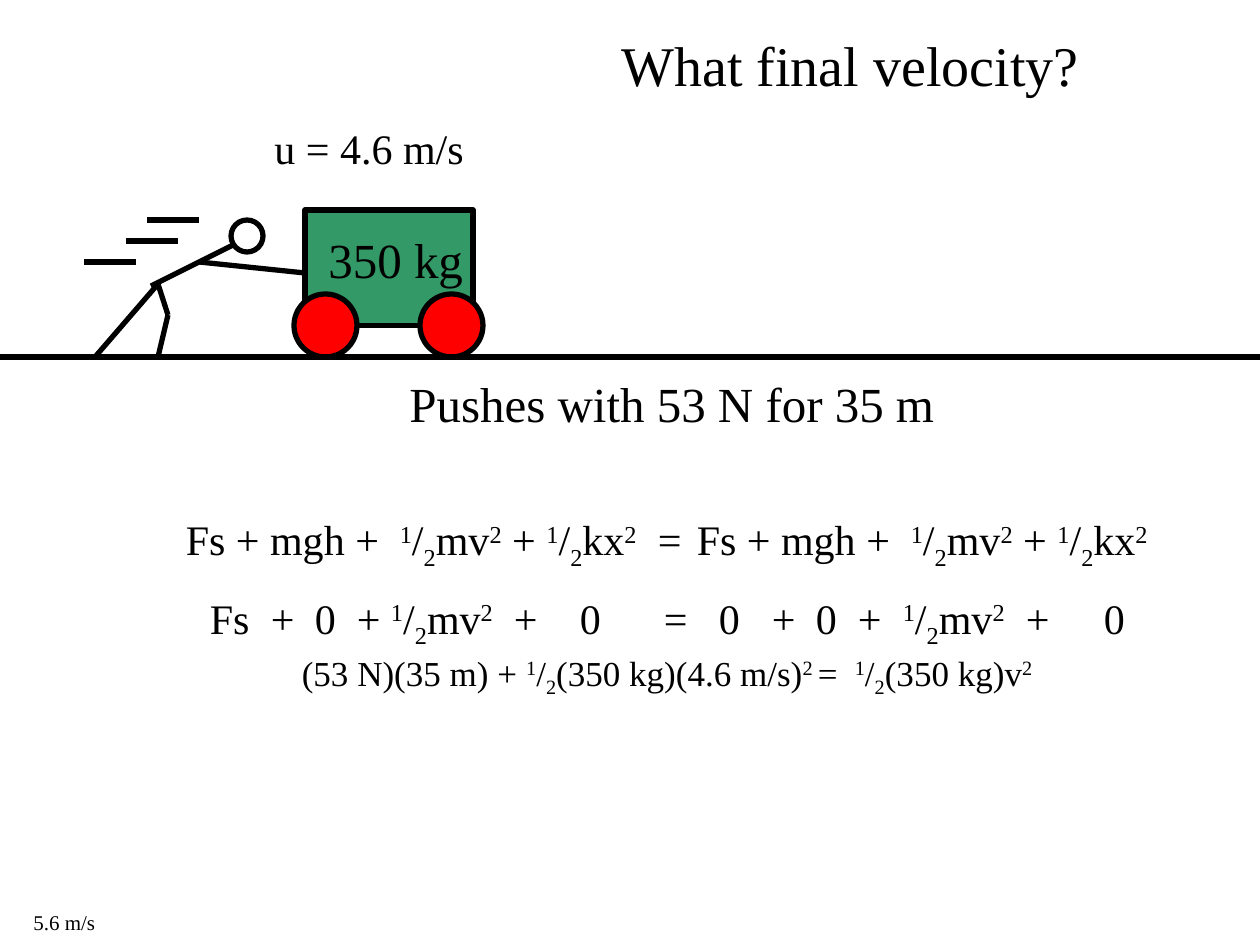
from lxml import etree
from pptx import Presentation
from pptx.dml.color import RGBColor
from pptx.enum.shapes import MSO_CONNECTOR, MSO_SHAPE
from pptx.enum.text import MSO_ANCHOR, MSO_AUTO_SIZE, PP_ALIGN
from pptx.oxml.ns import qn
from pptx.util import Emu, Pt

BLACK = RGBColor(0, 0, 0)
GREEN = RGBColor(0x33, 0x99, 0x66)
RED = RGBColor(0xFF, 0, 0)
STRAIGHT = MSO_CONNECTOR.STRAIGHT
RECTANGLE, OVAL = MSO_SHAPE.RECTANGLE, MSO_SHAPE.OVAL
TOP, LEFT, NO_FIT = MSO_ANCHOR.TOP, PP_ALIGN.LEFT, MSO_AUTO_SIZE.NONE
SCALE = 914400 / 126
BASELINES = {"^": "30000", "_": "-25000"}
HALF = "|^1|/|_2|"
HALF_MV = HALF + "mv|^2|"
ENERGY_TERMS = f"{HALF_MV} + {HALF}kx|^2|"
EQUATIONS = [
    (24, 45, [186, 400, 658, 697, 911],
     ["Fs + mgh +", ENERGY_TERMS, "=", "Fs + mgh +", ENERGY_TERMS]),
    (24, 45, [210, 271, 315, 357, 514, 580, 664, 719, 772, 816, 858, 903, 1026, 1104],
     ["Fs", "+", "0", f"+ {HALF_MV}", "+", "0", "=",
      "0", "+", "0", "+", HALF_MV, "+", "0"]),
    (20, 28, [302, 855],
     [f"(53 N)(35 m) + {HALF}(350 kg)(4.6 m/s)|^2 |=", f"{HALF}(350 kg)v|^2"]),
]
LABELS = [
    ((21, 903, 87, 38), 12, "5.6 m/s"),
    ((262, 116, 214, 63), 24, "u = 4.6 m/s"),
    ((316, 223, 160, 72), 28, "350 kg"),
    ((397, 367, 551, 72), 28, "Pushes with 53 N for 35 m"),
]
SPEED_LINES = [(199, 220, 147, 220), (178, 241, 126, 241), (136, 262, 84, 262)]
LIMBS = [
    (158, 284, 95, 357),
    (158, 284, 168, 315),
    (151, 286, 235, 244),
    (168, 315, 158, 357),
    (199, 262, 305, 273),
]


def px(*lengths):
    """Turn pixel lengths into EMU."""
    return [Emu(round(length * SCALE)) for length in lengths]


def apply(target, values):
    """Set every attribute in a dict of format values."""
    for name, value in values.items():
        setattr(target, name, value)


class SlideBuilder:
    """Hold the drawing style and the current slide."""

    def __init__(self, slide):
        self.slide = slide
        self.frame_format = {"auto_size": NO_FIT, "vertical_anchor": TOP}
        self.font_format = {"name": "Times New Roman", "bold": False}

    def outline(self, line):
        """Apply the black pen."""
        line.color.rgb = BLACK
        line.width = Pt(3)

    def runs(self, paragraph, text, size):
        """Add runs, raising or lowering the marked pieces."""
        for piece in filter(None, text.split("|")):
            baseline = BASELINES.get(piece[0])
            run = paragraph.add_run()
            run.text = piece[1:] if baseline else piece
            apply(run.font, self.font_format | {"size": Pt(size)})
            run.font.color.rgb = BLACK
            if baseline:
                run.font._element.set("baseline", baseline)

    def title(self, box, size, text):
        """Place the title placeholder."""
        shape = self.slide.shapes.title
        apply(shape, dict(zip(("left", "top", "width", "height"), px(*box))))
        apply(shape.text_frame, self.frame_format | {"word_wrap": False})
        paragraph = shape.text_frame.paragraphs[0]
        apply(paragraph, {"alignment": LEFT, "line_spacing": 1.0})
        self.runs(paragraph, text, size)

    def label(self, box, size, text):
        """Add a single line of text."""
        frame = self.slide.shapes.add_textbox(*px(*box)).text_frame
        apply(frame, self.frame_format | {"word_wrap": False})
        self.runs(frame.paragraphs[0], text, size)

    def equations(self, box, rows):
        """Add equations with their terms set on tab stops."""
        frame = self.slide.shapes.add_textbox(*px(*box)).text_frame
        apply(frame, self.frame_format | {"word_wrap": True})
        origin = box[0] + frame.margin_left / SCALE
        for index, (size, spacing, stops, terms) in enumerate(rows):
            paragraph = frame.add_paragraph() if index else frame.paragraphs[0]
            paragraph.line_spacing = Pt(spacing)
            tabs = etree.SubElement(paragraph._p.get_or_add_pPr(), qn("a:tabLst"))
            for position in px(*(stop - origin for stop in stops)):
                etree.SubElement(tabs, qn("a:tab"), pos=str(position), algn="l")
            self.runs(paragraph, "".join(f"\t{term}" for term in terms), size)

    def shape(self, shapes, kind, box, color=None):
        """Add an outlined shape, filled when a colour is given."""
        shape = shapes.add_shape(kind, *px(*box))
        shape.shadow.inherit = False
        self.outline(shape.line)
        if color is None:
            shape.fill.background()
        else:
            shape.fill.solid()
            shape.fill.fore_color.rgb = color

    def line(self, shapes, ends):
        """Add a straight line."""
        connector = shapes.add_connector(STRAIGHT, *px(*ends))
        self.outline(connector.line)
        etree.SubElement(connector._element.spPr, qn("a:effectLst"))


def main():
    """Build the slide and save it."""
    presentation = Presentation()
    presentation.slide_width, presentation.slide_height = px(1260, 945)
    slide = presentation.slides.add_slide(presentation.slide_layouts[5])
    builder = SlideBuilder(slide)
    builder.title((609, 24, 483, 79), 32, "What final velocity?")
    builder.equations((-10, 486, 1355, 233), EQUATIONS)

    cart = slide.shapes.add_group_shape().shapes
    builder.shape(cart, RECTANGLE, (305, 210, 168, 116), GREEN)
    for left in (294, 420):
        builder.shape(cart, OVAL, (left, 294, 63, 63), RED)

    for box, size, text in LABELS:
        builder.label(box, size, text)
    for ends in [(0, 357, 1260, 357), *SPEED_LINES]:
        builder.line(slide.shapes, ends)

    pusher = slide.shapes.add_group_shape().shapes
    for ends in LIMBS:
        builder.line(pusher, ends)
    builder.shape(pusher, OVAL, (231, 220, 32, 32))
    presentation.save("out.pptx")


if __name__ == "__main__":
    main()
